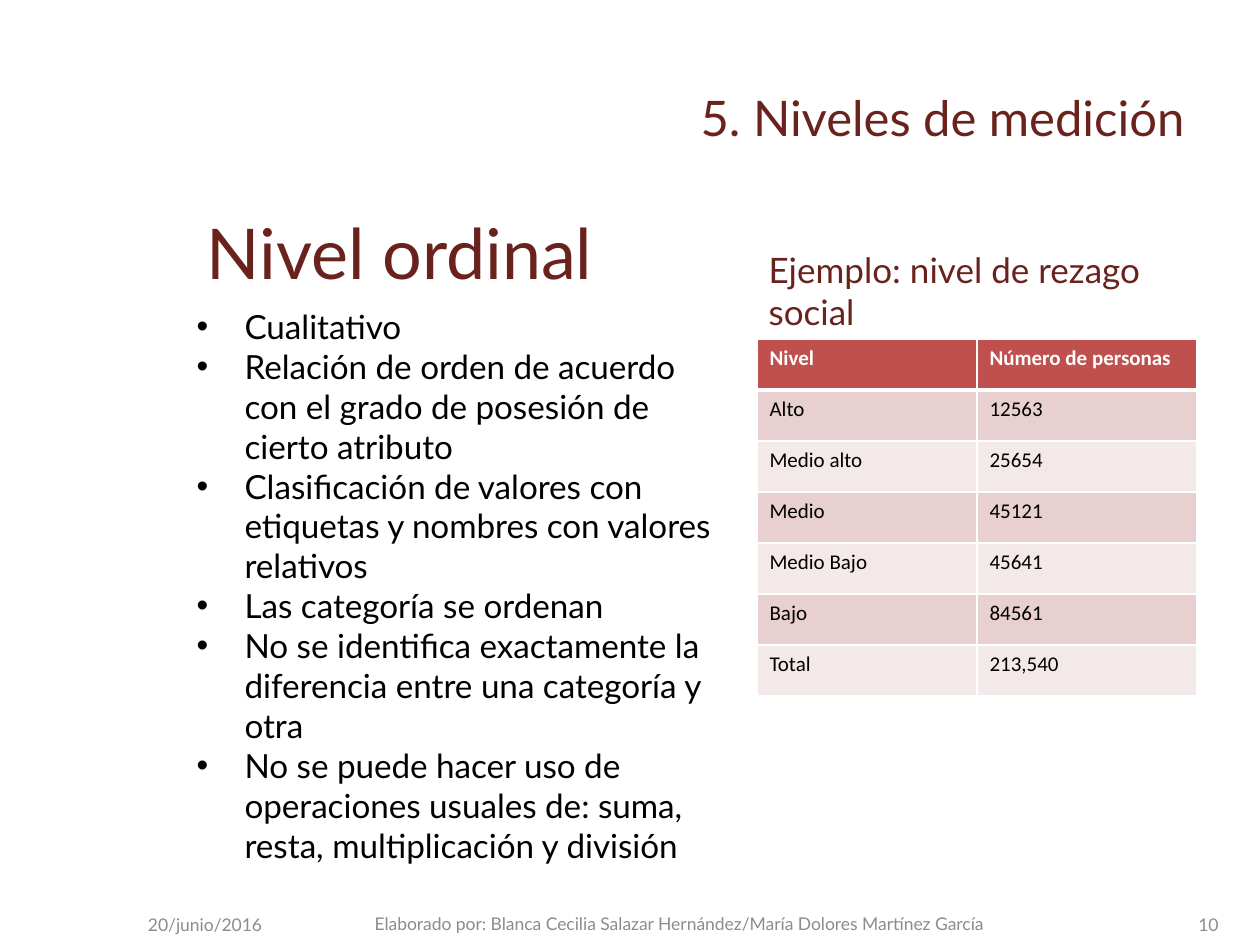
from lxml import etree
from pptx import Presentation
from pptx.dml.color import RGBColor
from pptx.enum.text import MSO_ANCHOR, MSO_AUTO_SIZE, PP_ALIGN
from pptx.oxml.ns import qn
from pptx.util import Emu, Pt

LEFT, CENTER, RIGHT = PP_ALIGN.LEFT, PP_ALIGN.CENTER, PP_ALIGN.RIGHT
TOP, MIDDLE, BOTTOM = MSO_ANCHOR.TOP, MSO_ANCHOR.MIDDLE, MSO_ANCHOR.BOTTOM
NO_AUTOFIT = MSO_AUTO_SIZE.NONE

MAROON = RGBColor(0x6A, 0x22, 0x1D)
BLACK = RGBColor(0x00, 0x00, 0x00)
WHITE = RGBColor(0xFF, 0xFF, 0xFF)
GRAY = RGBColor(0x8C, 0x8C, 0x8C)
HEADER_RED = RGBColor(0xC0, 0x50, 0x4D)
ROW_DARK = RGBColor(0xE8, 0xD0, 0xD0)
ROW_LIGHT = RGBColor(0xF4, 0xE9, 0xE9)

PX_PER_INCH = 126
COMPARISON_LAYOUT = 4
BULLET_INDENT = 48

FEATURES = [
    "Cualitativo",
    "Relación de orden de acuerdo con el grado de posesión de cierto atributo",
    "Clasificación de valores con etiquetas y nombres con valores relativos",
    "Las categoría se ordenan",
    "No se identifica exactamente la diferencia entre una categoría y otra",
    "No se puede hacer uso de operaciones usuales de: suma, resta, "
    "multiplicación y división",
]
LEVELS = [
    ("Nivel", "Número de personas"),
    ("Alto", "12563"),
    ("Medio alto", "25654"),
    ("Medio", "45121"),
    ("Medio Bajo", "45641"),
    ("Bajo", "84561"),
    ("Total", "213,540"),
]


def px(length):
    return Emu(round(length * 914400 / PX_PER_INCH))


def style_font(font, name, size, color, bold=False):
    font.name = name
    font.size = Pt(size)
    font.bold = bold
    font.color.rgb = color


def place(shape, left, top, width, height):
    shape.left, shape.top = px(left), px(top)
    shape.width, shape.height = px(width), px(height)


def write(shape, lines, size, color, align, anchor):
    frame = shape.text_frame
    frame.text = "\n".join(lines)
    frame.word_wrap = True
    frame.auto_size = NO_AUTOFIT
    frame.vertical_anchor = anchor
    for para in frame.paragraphs:
        para.alignment = align
        para.space_before = Pt(0)
        for span in para.runs:
            style_font(span.font, "Lato", size, color)


def hang_bullets(shape):
    for para in shape.text_frame.paragraphs:
        properties = para._p.get_or_add_pPr()
        properties.set("marL", str(px(BULLET_INDENT)))
        properties.set("indent", str(-px(BULLET_INDENT)))
        bullet = etree.SubElement(properties, qn("a:buChar"))
        bullet.set("char", "•")


def add_footer(page, text, bounds, align):
    box = page.shapes.add_textbox(*map(px, bounds))
    write(box, [text], 10, GRAY, align, MIDDLE)


def border_cell(cell, widths):
    properties = cell._tc.get_or_add_tcPr()
    for side, width in widths.items():
        line = etree.SubElement(properties, qn(f"a:ln{side}"), w=str(Pt(width)))
        fill = etree.SubElement(line, qn("a:solidFill"))
        etree.SubElement(fill, qn("a:srgbClr"), val=str(WHITE))


def add_level_table(page, left, top, column_width, row_height):
    rows, columns = len(LEVELS), len(LEVELS[0])
    table = page.shapes.add_table(
        rows, columns, px(left), px(top),
        px(column_width * columns), px(row_height * rows),
    ).table
    for row_index, values in enumerate(LEVELS):
        header = row_index == 0
        fill = HEADER_RED if header else (ROW_LIGHT, ROW_DARK)[row_index % 2]
        top_width = 3 if row_index == 1 else 1
        bottom_width = 3 if header else 1
        for column_index, value in enumerate(values):
            cell = table.cell(row_index, column_index)
            border_cell(cell, {"L": 1, "R": 1, "T": top_width, "B": bottom_width})
            cell.fill.solid()
            cell.fill.fore_color.rgb = fill
            cell.text = value
            span = cell.text_frame.paragraphs[0].runs[0]
            style_font(span.font, "Calibri", 12, WHITE if header else BLACK, header)


def main():
    deck = Presentation()
    deck.slide_width, deck.slide_height = px(1260), px(945)
    page = deck.slides.add_slide(deck.slide_layouts[COMPARISON_LAYOUT])
    title, heading, features, example, table_slot = page.placeholders

    place(title, 233, 38, 964, 157)
    write(title, ["5. Niveles de medición"], 28, MAROON, RIGHT, MIDDLE)
    place(heading, 184, 212, 486, 88)
    write(heading, ["Nivel ordinal\t"], 40, MAROON, CENTER, BOTTOM)
    place(features, 184, 300, 552, 544)
    write(features, FEATURES, 19, BLACK, LEFT, TOP)
    hang_bullets(features)
    place(example, 756, 251, 475, 88)
    write(example, ["Ejemplo: nivel de rezago social"], 20, MAROON, LEFT, BOTTOM)

    table_slot.element.getparent().remove(table_slot.element)
    add_level_table(page, 757, 339, 220, 51)

    add_footer(page, "20/junio/2016", (58, 900, 294, 50), CENTER)
    add_footer(
        page,
        "Elaborado por: Blanca Cecilia Salazar Hernández/María Dolores Martínez García",
        (352, 899, 654, 50), CENTER,
    )
    add_footer(page, "10", (937, 900, 294, 50), RIGHT)
    deck.save("out.pptx")


if __name__ == "__main__":
    main()
